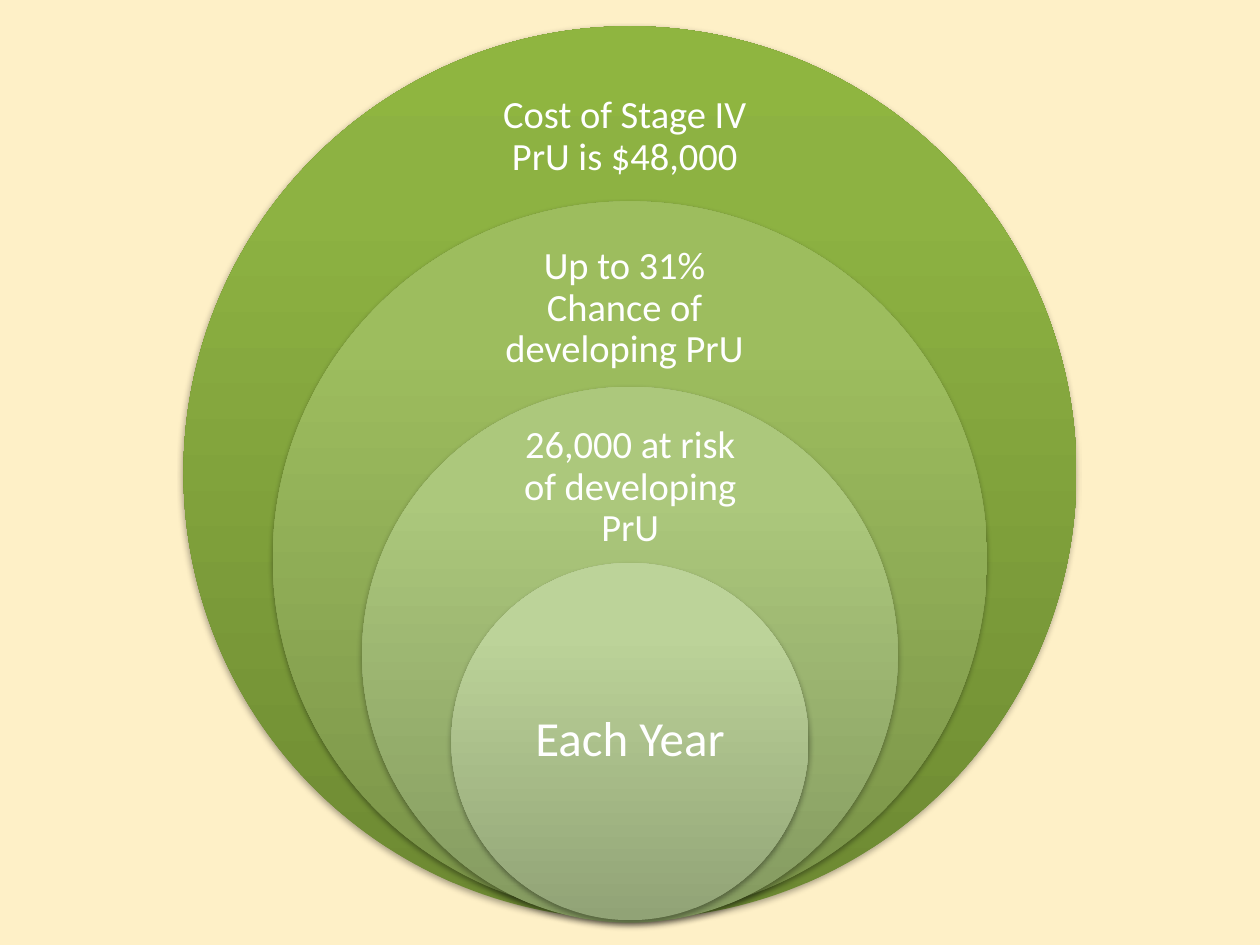
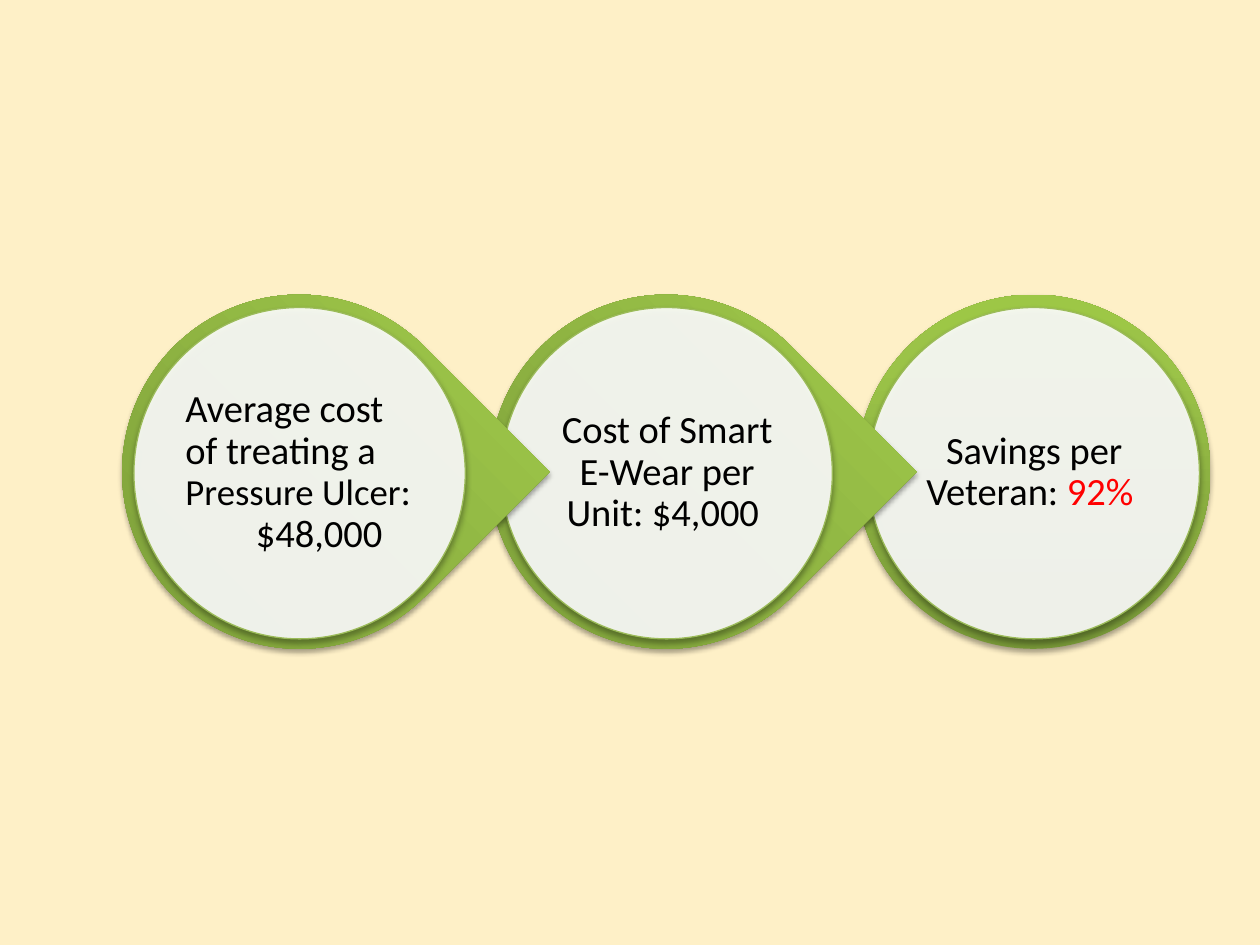
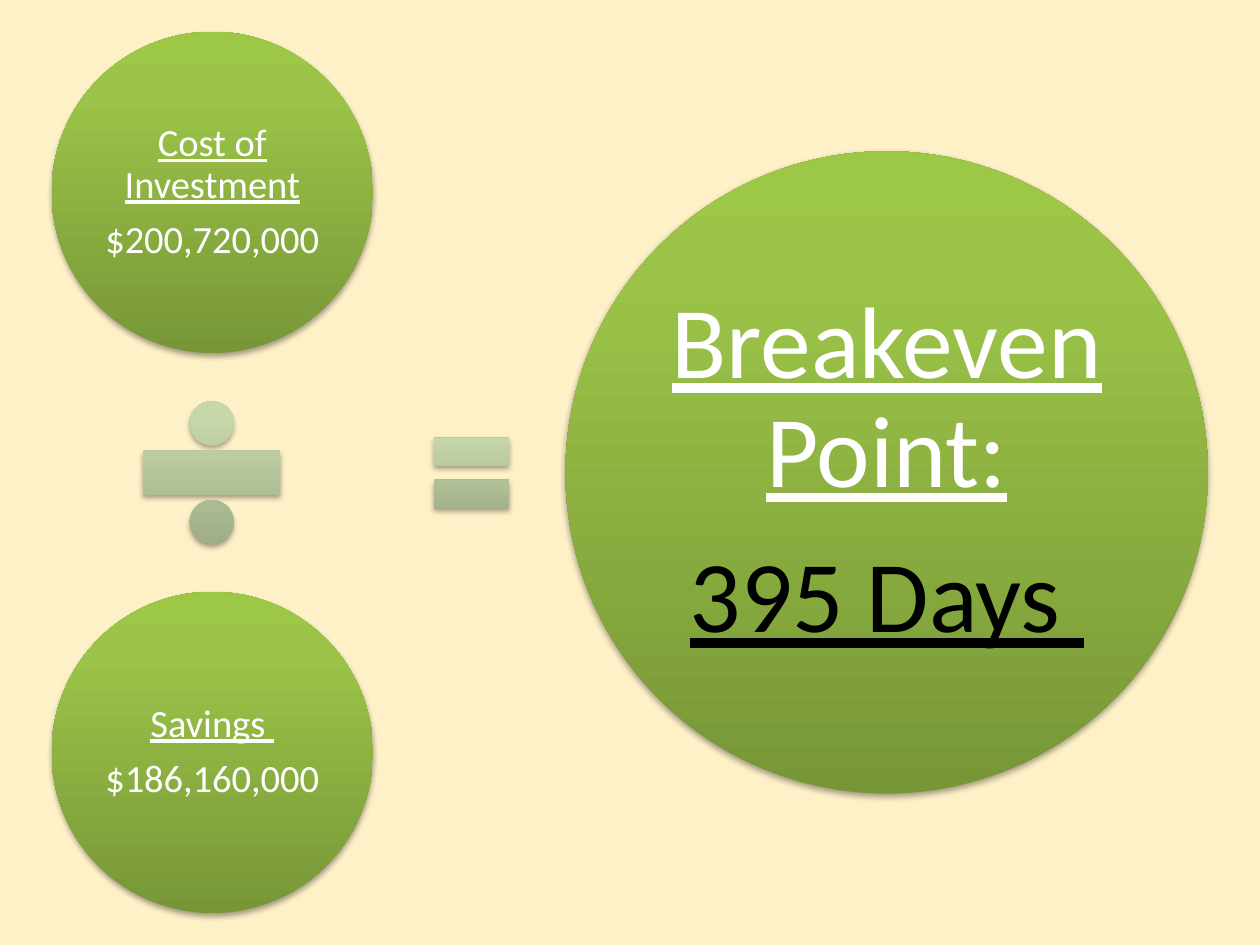
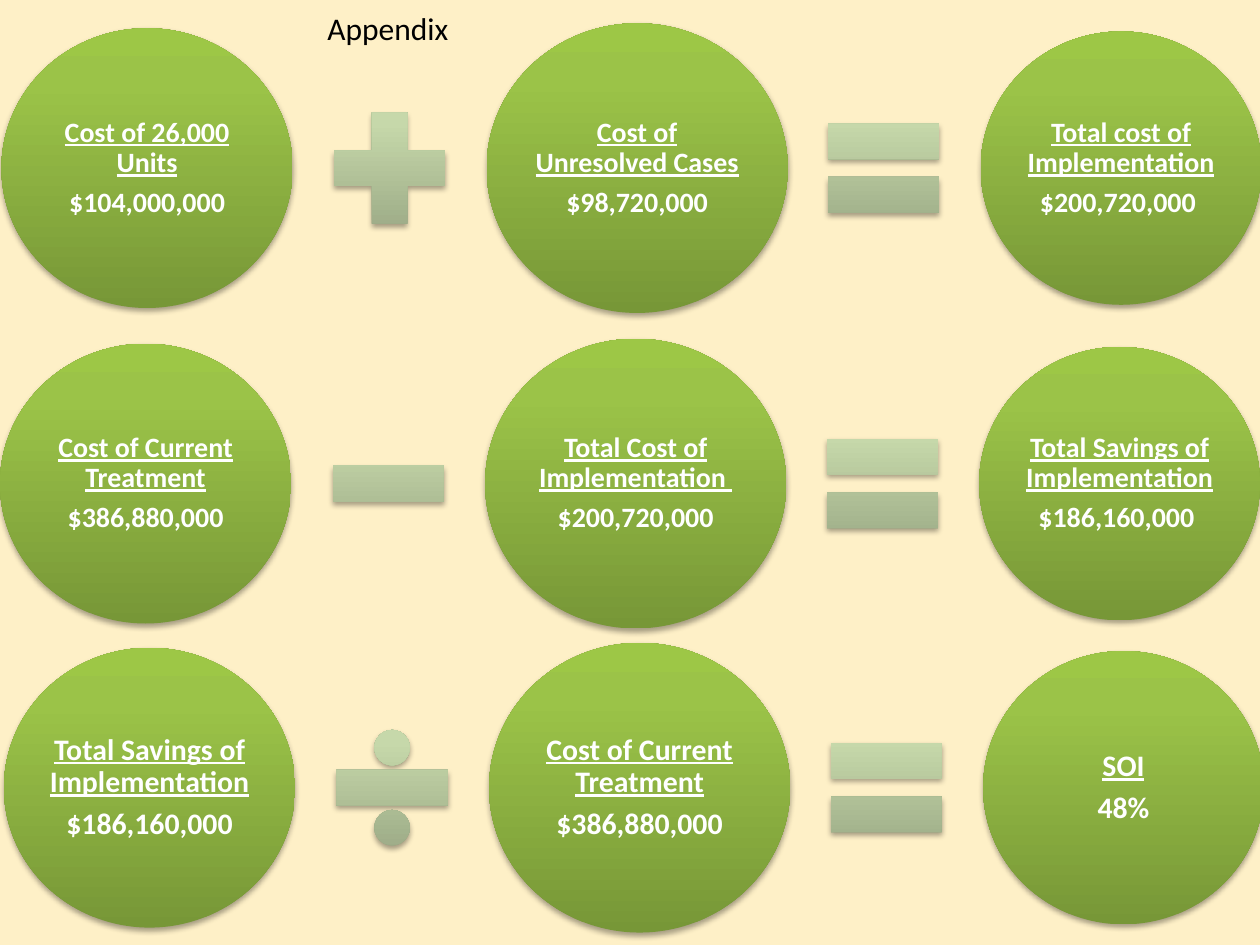
from copy import deepcopy
from math import sqrt

from lxml.etree import SubElement
from pptx import Presentation
from pptx.dml.color import RGBColor
from pptx.enum.shapes import MSO_SHAPE
from pptx.enum.text import MSO_ANCHOR, PP_ALIGN
from pptx.oxml.ns import qn
from pptx.util import Cm, Pt

CREAM = RGBColor(0xFE, 0xF0, 0xC7)
WHITE = RGBColor(0xFF, 0xFF, 0xFF)
BLACK = RGBColor(0x00, 0x00, 0x00)
RED = RGBColor(0xFF, 0x00, 0x00)
LEAF = RGBColor(0x9B, 0xBB, 0x59)
GREEN_GRADIENT = (RGBColor(0x77, 0x97, 0x37), RGBColor(0x9B, 0xC3, 0x48), RGBColor(0x9D, 0xC7, 0x46))
PALE_GRADIENT = (RGBColor(0x98, 0xA6, 0x83), RGBColor(0xC6, 0xD8, 0xAA), RGBColor(0xC7, 0xDA, 0xAA))
RING_GRADIENTS = (
    (RGBColor(0x6D, 0x89, 0x32), RGBColor(0x8D, 0xB2, 0x42), RGBColor(0x8F, 0xB5, 0x40)),
    (RGBColor(0x79, 0x92, 0x48), RGBColor(0x9D, 0xBD, 0x5E), RGBColor(0x9E, 0xC0, 0x5C)),
    (RGBColor(0x84, 0x9A, 0x60), RGBColor(0xAC, 0xC8, 0x7C), RGBColor(0xAD, 0xCA, 0x7B)),
    (RGBColor(0x91, 0xA3, 0x76), RGBColor(0xBC, 0xD3, 0x99), RGBColor(0xBE, 0xD5, 0x99)),
)
FONT = "Calibri"
INSCRIBED = sqrt(0.5)
UNDERLINED = {"underline": True}


def add_shadowed_shape(slide, kind, left, top, width, height, gradient=None):
    shape = slide.shapes.add_shape(kind, Cm(left), Cm(top), Cm(width), Cm(height))
    shape.line.fill.background()
    if gradient:
        shape.fill.gradient()
        shape.fill.gradient_angle = 90
        stop_list = shape._element.spPr.find(".//" + qn("a:gsLst"))
        stop_list.append(deepcopy(stop_list[0]))
        for stop, position, color in zip(shape.fill.gradient_stops, (0, 0.8, 1), gradient):
            stop.position = position
            stop.color.rgb = color
    shape.shadow.inherit = False
    effects = shape._element.spPr.find(qn("a:effectLst"))
    shadow = SubElement(effects, qn("a:outerShdw"), blurRad="40000", dist="23000", dir="5400000", rotWithShape="0")
    shadow_color = SubElement(shadow, qn("a:srgbClr"), val="000000")
    SubElement(shadow_color, qn("a:alpha"), val="35000")
    return shape


def write_text(slide, left, top, width, height, paragraphs, size=22, color=WHITE, bold=False,
               alignment=PP_ALIGN.CENTER, anchor=MSO_ANCHOR.MIDDLE, inset=(0.08, 0.08),
               line_spacing=0.9, space_ratio=0.35, wrap=True, last_indent=0):
    frame = slide.shapes.add_textbox(Cm(left), Cm(top), Cm(width), Cm(height)).text_frame
    frame.word_wrap = wrap
    frame.vertical_anchor = anchor
    frame.margin_left = frame.margin_right = Cm(inset[0])
    frame.margin_top = frame.margin_bottom = Cm(inset[1])
    for index, runs in enumerate(paragraphs):
        paragraph = frame.add_paragraph() if index else frame.paragraphs[0]
        paragraph.alignment = alignment
        paragraph.line_spacing = line_spacing
        paragraph.space_after = Pt(round(space_ratio * size, 1))
        for text, style in runs:
            run = paragraph.add_run()
            run.text = text
            run.font.name = FONT
            run.font.size = Pt(style.get("size", size))
            run.font.color.rgb = style.get("color", color)
            run.font.underline = style.get("underline", False)
            run.font.bold = bold
    if last_indent:
        properties = paragraph._p.get_or_add_pPr()
        properties.set("marL", str(Cm(last_indent)))
        properties.set("indent", "0")


presentation = Presentation()
presentation.slide_width = Cm(25.4)
presentation.slide_height = Cm(19.05)
background = presentation.slide_master.background.fill
background.solid()
background.fore_color.rgb = CREAM
blank_layout = presentation.slide_layouts[6]
risk_slide, unit_slide, breakeven_slide, appendix_slide = [
    presentation.slides.add_slide(blank_layout) for _ in range(4)
]

rings = [
    (0.53, (9.32, 1.42, 6.55, 2.69), "Cost of Stage IV PrU is $48,000", 22),
    (4.06, (9.73, 4.93, 5.72, 2.59), "Up to 31% Chance of developing PrU", 22),
    (7.8, (10.19, 8.61, 5.03, 2.44), "26,000 at risk of developing PrU", 22),
    (11.35, (10.16, 13.13, 5.08, 3.61), "Each Year", 28),
]
for index, (top, text_box, text, size) in enumerate(rings):
    diameter = 18 - 3.6 * index
    add_shadowed_shape(risk_slide, MSO_SHAPE.OVAL, 12.7 - diameter / 2, top, diameter, diameter, RING_GRADIENTS[index])
    write_text(risk_slide, *text_box, [[(text, {})]], size=size, inset=(0.3, 0.3))

steps = [
    (2, MSO_SHAPE.OVAL, [[("Savings per Veteran: ", {}), ("92% ", {"color": RED})]], {}),
    (1, MSO_SHAPE.TEAR, [[("Cost of Smart E-Wear per Unit: $4,000 ", {})]], {}),
    (0, MSO_SHAPE.TEAR,
     [[("Average cost of treating a ", {}), ("Pressure Ulcer", {"size": 21}), (":", {})], [("$48,000", {})]],
     {"alignment": PP_ALIGN.LEFT, "space_ratio": 0, "last_indent": 1.42}),
]
for column, kind, paragraphs, text_format in steps:
    left = 2.46 + 7.4 * column
    marker = add_shadowed_shape(unit_slide, kind, left, 5.94, 7.14, 7.14, GREEN_GRADIENT)
    if kind == MSO_SHAPE.TEAR:
        marker.rotation = 45
    disc = add_shadowed_shape(unit_slide, MSO_SHAPE.OVAL, left + 0.24, 6.2, 6.68, 6.68)
    disc.fill.solid()
    disc.fill.fore_color.rgb = WHITE
    disc_color = disc._element.spPr.find(qn("a:solidFill")).find(qn("a:srgbClr"))
    SubElement(disc_color, qn("a:alpha"), val="90000")
    disc.line.color.rgb = LEAF
    disc.line.width = Pt(0.75)
    write_text(unit_slide, left + 1.2, 7.14, 4.78, 4.78, paragraphs, color=BLACK, **text_format)

operators = [
    (breakeven_slide, MSO_SHAPE.MATH_DIVIDE, 2.39, 7.65, 3.76, 3.76),
    (breakeven_slide, MSO_SHAPE.MATH_EQUAL, 8.48, 8.33, 2.06, 2.41),
]
small = {"size": 22}
large = {"size": 58, "inset": (0.2, 0.2)}
circles = [
    (breakeven_slide, 1.04, 0.64, 6.48, 6.48, "Cost of Investment", ("$200,720,000", {}), small),
    (breakeven_slide, 1.04, 11.93, 6.48, 6.48, "Savings ", ("$186,160,000", {}), small),
    (breakeven_slide, 11.4, 3.05, 12.95, 12.95, "Breakeven Point:",
     ("395 Days ", {"color": BLACK, "underline": True}), large),
]

columns = [(0, 5.87, 5.64), (9.78, 6.07, 5.84), (19.74, 5.66, 5.51)]
operator_size = 3.05
equations = [
    (0.03, 3.39, 16, MSO_SHAPE.MATH_PLUS, [
        ("Cost of 26,000 Units", "$104,000,000"),
        ("Cost of Unresolved Cases ", "$98,720,000"),
        ("Total cost of Implementation", "$200,720,000 "),
    ]),
    (0, 9.75, 16, MSO_SHAPE.MATH_MINUS, [
        ("Cost of Current Treatment", "$386,880,000"),
        ("Total Cost of Implementation ", "$200,720,000"),
        ("Total Savings of Implementation", "$186,160,000 "),
    ]),
    (0.08, 15.88, 17, MSO_SHAPE.MATH_DIVIDE, [
        ("Total Savings of Implementation", "$186,160,000"),
        ("Cost of Current Treatment", "$386,880,000"),
        ("SOI", "48%"),
    ]),
]
for row_left, middle, size, operator, terms in equations:
    for kind, left in ((operator, 6.3), (MSO_SHAPE.MATH_EQUAL, 16.26)):
        operators.append((appendix_slide, kind, row_left + left, middle - operator_size / 2,
                          operator_size, operator_size))
    for (left, width, height), (label, amount) in zip(columns, terms):
        circles.append((appendix_slide, row_left + left, middle - height / 2, width, height, label,
                        (amount, {}), {"size": size, "bold": True, "inset": (0.05, 0.05)}))

for slide, kind, left, top, width, height in operators:
    add_shadowed_shape(slide, kind, left, top, width, height, PALE_GRADIENT)

for slide, left, top, width, height, label, amount, text_format in circles:
    add_shadowed_shape(slide, MSO_SHAPE.OVAL, left, top, width, height, GREEN_GRADIENT)
    text_width, text_height = width * INSCRIBED, height * INSCRIBED
    write_text(slide, left + (width - text_width) / 2, top + (height - text_height) / 2, text_width, text_height,
               [[(label, UNDERLINED)], [amount]], **text_format)

write_text(appendix_slide, 6.35, 0.05, 3.12, 1.02, [[("Appendix", {})]], size=18, color=BLACK,
           alignment=PP_ALIGN.LEFT, anchor=MSO_ANCHOR.TOP, inset=(0.25, 0.13),
           line_spacing=1.0, space_ratio=0, wrap=False)

presentation.save("out.pptx")
